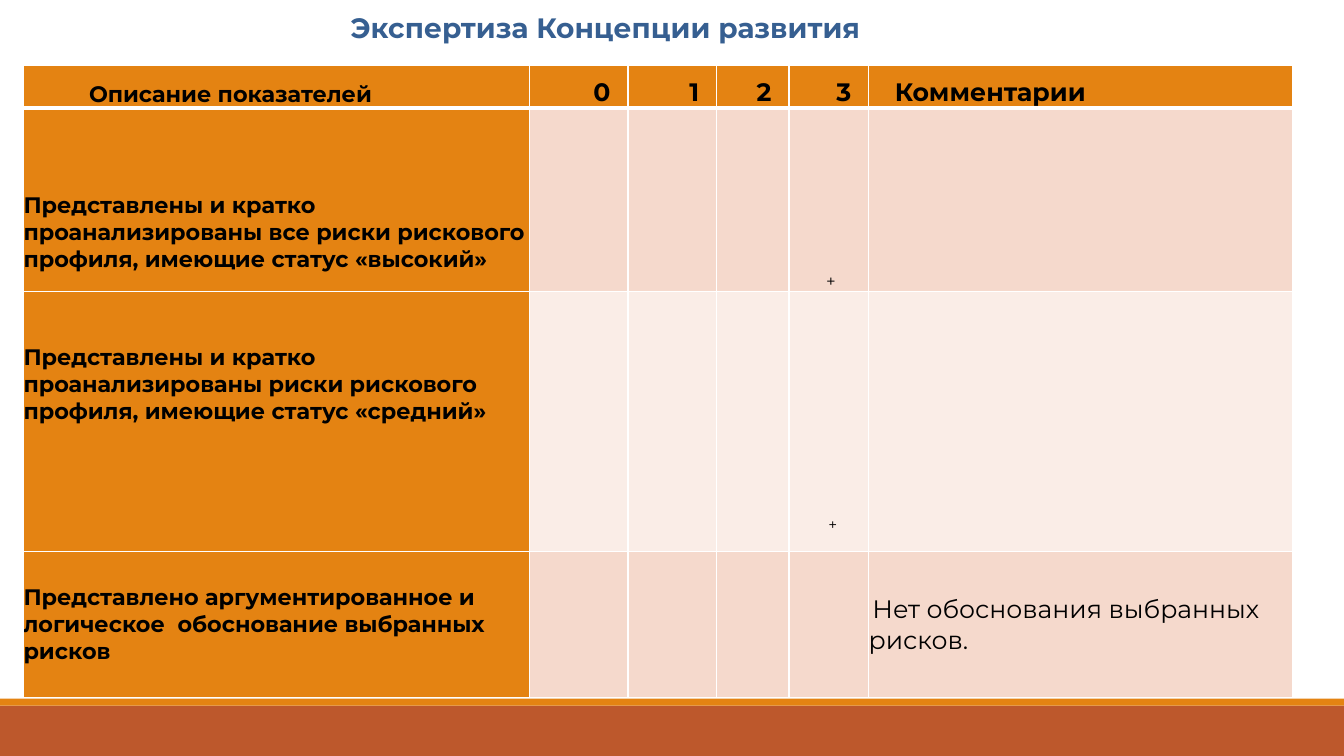
"""Builds the slide with the table that rates the development concept."""
import pptx
import pptx.dml.color
import pptx.enum.shapes
import pptx.enum.text
import pptx.oxml
import pptx.oxml.ns
import pptx.util

Pt = pptx.util.Pt
ALIGN = pptx.enum.text.PP_ALIGN
ANCHOR = pptx.enum.text.MSO_ANCHOR
ORANGE, RUST, WHITE = "E48312", "BD582C", "FFFFFF"
BAND_DARK, BAND_LIGHT = "F5D9CC", "FAEDE7"


def paint(color_format, value):
    color_format.rgb = pptx.dml.color.RGBColor.from_string(value)


def write(frame, text, size=16, bold=False, color="000000", align=ALIGN.LEFT, font="Montserrat"):
    paragraph = frame.paragraphs[0]
    paragraph.alignment = align
    run = paragraph.add_run()
    run.text = text
    run.font.name, run.font.size, run.font.bold = font, Pt(size), bold
    paint(run.font.color, color)


class ConceptSlide:
    def __init__(self, deck):
        self.slide = deck.slides.add_slide(deck.slide_layouts[5])

    def bar(self, left, top, width, height, color):
        bar = self.slide.shapes.add_shape(
            pptx.enum.shapes.MSO_SHAPE.RECTANGLE, Pt(left), Pt(top), Pt(width), Pt(height))
        bar.shadow.inherit = False
        bar.fill.solid()
        paint(bar.fill.fore_color, color)
        bar.line.fill.background()

    def title(self, text, left, top, width, height):
        title = self.slide.shapes.title
        title.left, title.top, title.width, title.height = Pt(left), Pt(top), Pt(width), Pt(height)
        frame = title.text_frame
        frame.word_wrap = True
        frame.auto_size = pptx.enum.text.MSO_AUTO_SIZE.NONE
        frame.vertical_anchor = ANCHOR.MIDDLE
        write(frame, text, size=20, bold=True, color="365F91", align=ALIGN.CENTER)

    def table(self, left, top, widths, heights):
        table = self.slide.shapes.add_table(
            len(heights), len(widths), Pt(left), Pt(top), Pt(sum(widths)), Pt(sum(heights))).table
        for column, width in zip(table.columns, widths):
            column.width = Pt(width)
        for row, height in zip(table.rows, heights):
            row.height = Pt(height)
        return table

    def cell(self, cell, fill, bottom_line=1):
        cell.fill.solid()
        paint(cell.fill.fore_color, fill)
        properties = cell._tc.get_or_add_tcPr()
        for position, side in enumerate("LRTB"):
            width = Pt(bottom_line if side == "B" else 1)
            properties.insert(position, pptx.oxml.parse_xml(
                f'<a:ln{side} {pptx.oxml.ns.nsdecls("a")} w="{width}"><a:solidFill>'
                f'<a:srgbClr val="{WHITE}"/></a:solidFill></a:ln{side}>'))

    def cell_text(self, cell, text, anchor=ANCHOR.BOTTOM, left=0, right=0, bottom=0, **style):
        cell.margin_left, cell.margin_right = Pt(left), Pt(right)
        cell.margin_top, cell.margin_bottom = 0, Pt(bottom)
        cell.vertical_anchor = anchor
        write(cell.text_frame, text, **style)


def main():
    deck = pptx.Presentation()
    deck.slide_width, deck.slide_height = Pt(960), Pt(540)
    page = ConceptSlide(deck)
    page.bar(0, 504, 960, 36, RUST)
    page.bar(0, 499, 960, 5, ORANGE)
    page.title("Экспертиза Концепции развития", 168.5, 3, 528, 33)

    ratings = page.table(16.8, 46.4, [361.4, 70.4, 63.4, 51.6, 56.9, 303.1], [31, 131, 185.6, 104.4])
    for row, band in enumerate([ORANGE, BAND_DARK, BAND_LIGHT, BAND_DARK]):
        for column in range(6):
            page.cell(ratings.cell(row, column), band if column else ORANGE,
                      bottom_line=1 if row else 3)

    page.cell_text(ratings.cell(0, 0), "Описание показателей", left=46.8, bold=True)
    for score in range(4):
        page.cell_text(ratings.cell(0, score + 1), str(score), right=12.5, size=18, bold=True,
                       align=ALIGN.RIGHT)
    page.cell_text(ratings.cell(0, 5), "Комментарии", left=18.7, size=18, bold=True)

    criteria = [
        ("Представлены и кратко проанализированы все риски рискового профиля, имеющие статус «высокий»",
         ANCHOR.BOTTOM, 13),
        ("Представлены и кратко проанализированы риски рискового профиля, имеющие статус «средний»",
         ANCHOR.MIDDLE, 53),
        ("Представлено аргументированное и логическое  обоснование выбранных рисков",
         ANCHOR.MIDDLE, 0),
    ]
    for row, (criterion, anchor, bottom) in enumerate(criteria, 1):
        page.cell_text(ratings.cell(row, 0), criterion, anchor=anchor, bottom=bottom, bold=True)

    for row, size, left, bottom in [(1, 12, 0, 0), (2, 11, 3, 12)]:
        page.cell_text(ratings.cell(row, 4), " +", left=left, bottom=bottom, size=size,
                       align=ALIGN.CENTER)
    comment = ratings.cell(3, 5)
    page.cell_text(comment, " ", anchor=ANCHOR.MIDDLE, size=12, font="Calibri")
    write(comment.text_frame, "Нет обоснования выбранных рисков.", size=18)
    deck.save("out.pptx")


if __name__ == "__main__":
    main()
